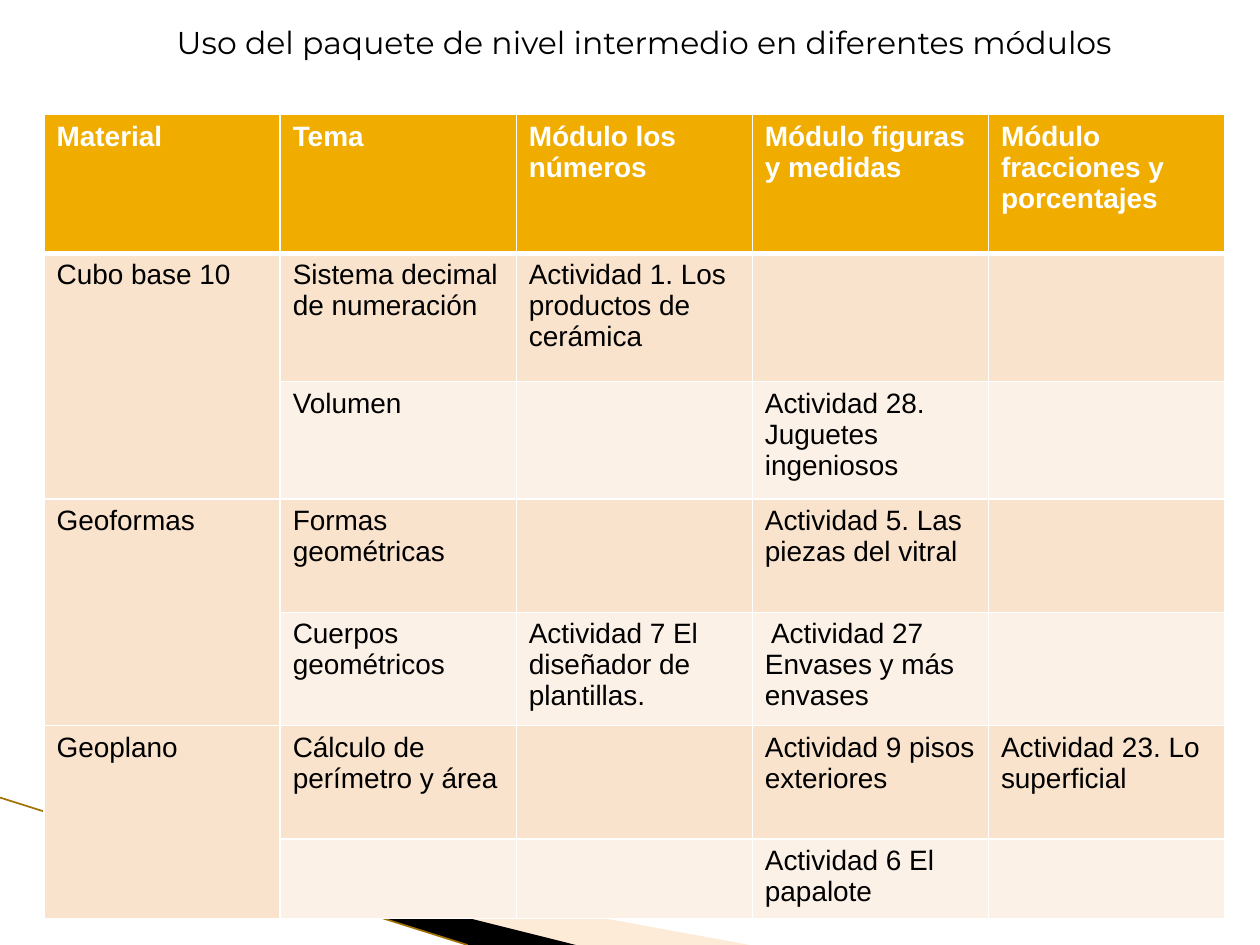
from dataclasses import dataclass
from typing import Optional

import pptx
import pptx.dml.color
import pptx.enum.text
import pptx.oxml
import pptx.oxml.ns
import pptx.util

Inches, Pt = pptx.util.Inches, pptx.util.Pt
PAGE_WIDTH, PAGE_HEIGHT = 10, 7.5
A_NAMESPACE = pptx.oxml.ns.nsdecls("a")


@dataclass(frozen=True)
class Theme:
    title_font: str = "Montserrat"
    body_font: str = "Arial"
    title_size: float = 18
    body_size: float = 16
    text: str = "000000"
    white: str = "FFFFFF"
    header: str = "F0AD00"
    bands: tuple[str, str] = ("FCF1E7", "F9E3CC")
    peach: str = "FCCF9B"
    gold: str = "A07000"
    thin: float = 1
    thick: float = 3


@dataclass(frozen=True)
class Wedge:
    """A corner decoration; points are shares of the slide's width and height."""
    points: list[tuple[float, float]]
    color: str
    opacity: Optional[int] = None


THEME = Theme()
WEDGES = [
    Wedge([(0.055, 0.868), (0.595, 1), (0.456, 1), (0.055, 0.867)], THEME.peach, 40),
    Wedge([(0.053, 0.865), (0.457, 1), (0.372, 1), (0.054, 0.867)], THEME.text),
]
ROWS = [
    ["Material", "Tema", "Módulo los números", "Módulo figuras y medidas",
     "Módulo fracciones y porcentajes"],
    ["Cubo base 10", "Sistema decimal de numeración",
     "Actividad 1. Los productos de cerámica", "", ""],
    ["", "Volumen", "", "Actividad 28.\nJuguetes ingeniosos", ""],
    ["Geoformas", "Formas geométricas", "", "Actividad 5. Las piezas del vitral", ""],
    ["", "Cuerpos geométricos", "Actividad 7 El diseñador de plantillas.",
     " Actividad 27 Envases y más envases", ""],
    ["Geoplano", "Cálculo de perímetro y área", "", "Actividad 9 pisos exteriores",
     "Actividad 23. Lo superficial"],
    ["", "", "", "Actividad 6 El papalote", ""],
]
ROW_HEIGHTS = [1.1, 1.02, 0.93, 0.9, 0.9, 0.9, 0.63]
TABLE_LEFT, TABLE_TOP, TABLE_WIDTH = 0.035, 0.1213, 0.937


def rgb(color: str) -> pptx.dml.color.RGBColor:
    return pptx.dml.color.RGBColor.from_string(color)


def across(share: float) -> int:
    return Inches(PAGE_WIDTH * share)


def down(share: float) -> int:
    return Inches(PAGE_HEIGHT * share)


def format_font(font, name: str, size: float, color: str, bold: bool = False) -> None:
    for attribute, value in {"name": name, "size": Pt(size), "bold": bold}.items():
        setattr(font, attribute, value)
    font.color.rgb = rgb(color)


def draw_wedge(page, wedge: Wedge) -> None:
    start, *others = [(across(x), down(y)) for x, y in wedge.points]
    builder = page.shapes.build_freeform(*start)
    builder.add_line_segments(others, close=True)
    shape = builder.convert_to_shape()
    shape.shadow.inherit = False
    shape.line.fill.background()
    shape.fill.solid()
    shape.fill.fore_color.rgb = rgb(wedge.color)
    if wedge.opacity is not None:
        color = shape.fill._xPr.find(".//" + pptx.oxml.ns.qn("a:srgbClr"))
        color.append(pptx.oxml.parse_xml(
            f'<a:alpha {A_NAMESPACE} val="{wedge.opacity * 1000}"/>'))


def draw_edge(page) -> None:
    edge = page.shapes.add_connector(
        pptx.enum.shapes.MSO_CONNECTOR.STRAIGHT,
        0, down(0.844), across(0.371), down(1))
    edge.line.color.rgb = rgb(THEME.gold)
    edge.line.width = Pt(0.95)
    edge._element.spPr.append(pptx.oxml.parse_xml(f"<a:effectLst {A_NAMESPACE}/>"))


def draw_title(page, words: str) -> None:
    title = page.shapes.title
    place = {"left": across(0.114), "top": down(0.0173),
             "width": across(0.795), "height": down(0.0947)}
    for attribute, value in place.items():
        setattr(title, attribute, value)
    frame = title.text_frame
    frame.text = words
    frame.word_wrap = True
    frame.auto_size = pptx.enum.text.MSO_AUTO_SIZE.NONE
    frame.vertical_anchor = pptx.enum.text.MSO_ANCHOR.TOP
    para = frame.paragraphs[0]
    para.alignment = pptx.enum.text.PP_ALIGN.CENTER
    format_font(para.runs[0].font, THEME.title_font, THEME.title_size, THEME.text)


def add_borders(cell, widths: dict[str, float]) -> None:
    properties = cell._tc.get_or_add_tcPr()
    for side, width in widths.items():
        properties.append(pptx.oxml.parse_xml(
            f'<a:ln{side} {A_NAMESPACE} w="{Pt(width)}"><a:solidFill>'
            f'<a:srgbClr val="{THEME.white}"/></a:solidFill></a:ln{side}>'))


def fill_cell(cell, words: str, row: int, column: int) -> None:
    is_header = row == 0
    add_borders(cell, {"L": THEME.thin, "R": THEME.thin,
                       "T": THEME.thick if row == 1 else THEME.thin,
                       "B": THEME.thick if is_header else THEME.thin})
    band = 1 if column == 0 else row % 2
    cell.fill.solid()
    cell.fill.fore_color.rgb = rgb(THEME.header if is_header else THEME.bands[band])
    cell.text = words
    for para in cell.text_frame.paragraphs:
        format_font(para.font, THEME.body_font, THEME.body_size,
                    THEME.white if is_header else THEME.text, is_header)
        for span in para.runs:
            format_font(span.font, THEME.body_font, THEME.body_size,
                        THEME.white if is_header else THEME.text, is_header)


def draw_table(page) -> None:
    table = page.shapes.add_table(
        len(ROWS), len(ROWS[0]), across(TABLE_LEFT), down(TABLE_TOP),
        across(TABLE_WIDTH), Inches(sum(ROW_HEIGHTS))).table
    table.horz_banding = False
    for row, height in zip(table.rows, ROW_HEIGHTS):
        row.height = Inches(height)
    for row, texts in enumerate(ROWS):
        for column, words in enumerate(texts):
            fill_cell(table.cell(row, column), words, row, column)
    for first in range(1, len(ROWS), 2):
        table.cell(first, 0).merge(table.cell(first + 1, 0))


def main() -> None:
    deck = pptx.Presentation()
    deck.slide_width, deck.slide_height = Inches(PAGE_WIDTH), Inches(PAGE_HEIGHT)
    page = deck.slides.add_slide(deck.slide_layouts.get_by_name("Title Only"))
    for wedge in WEDGES:
        draw_wedge(page, wedge)
    draw_edge(page)
    draw_table(page)
    draw_title(page, "Uso del paquete de nivel intermedio en diferentes módulos")
    deck.save("out.pptx")


if __name__ == "__main__":
    main()
